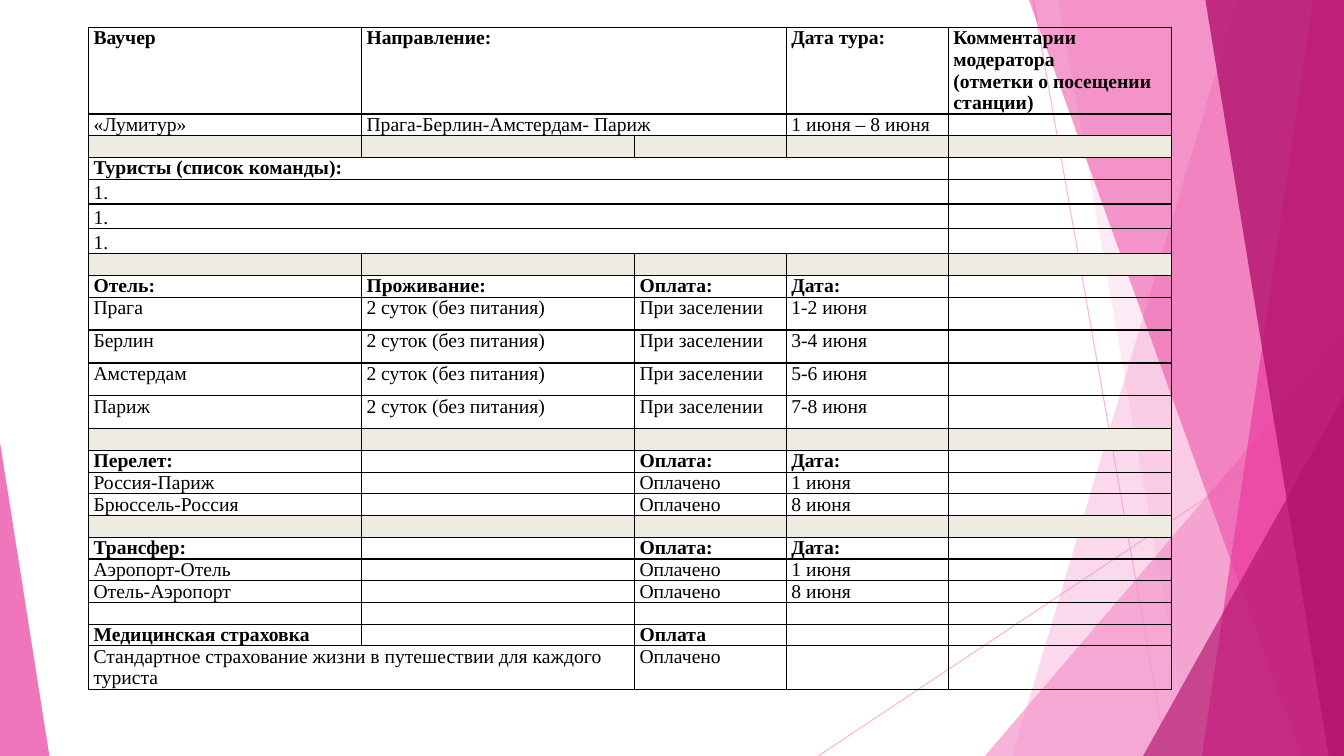
from lxml import etree
from pptx import Presentation
from pptx.dml.color import RGBColor
from pptx.enum.shapes import MSO_CONNECTOR, MSO_SHAPE
from pptx.oxml.ns import qn
from pptx.util import Pt

STRAIGHT = MSO_CONNECTOR.STRAIGHT
TRIANGLE = MSO_SHAPE.ISOSCELES_TRIANGLE

WIDTH, HEIGHT = 960, 540
BLACK = RGBColor(0x00, 0x00, 0x00)
BEIGE = RGBColor(0xEE, 0xEC, 0xE1)
LIGHT_PINK = RGBColor(0xF4, 0x96, 0xCB)
PINK = RGBColor(0xEB, 0x3D, 0x9F)
CRIMSON = RGBColor(0xB2, 0x13, 0x6D)
FONT_NAME, FONT_SIZE = "Times New Roman", 14

# Row kinds: height in points, space above the text, bold text, fill
KINDS = {
    "top": (62, 0, True, None),
    "heading": (15.5, 0, True, None),
    "plain": (15.5, 0, False, None),
    "band": (15.5, 0, False, BEIGE),
    "tourist": (17.75, 2.25, False, None),
    "hotel": (23.5, 0, False, None),
    "insurance": (31, 0, False, None),
}
# Kind, texts of the columns, merged columns (first, last)
STAY, ON_ARRIVAL, PAID = "2 суток (без питания)", "При заселении", "Оплачено"
ROWS = [
    ("top", ["Ваучер", "Направление:", "", "Дата тура:",
             "Комментарии модератора\n(отметки о посещении станции)"], (1, 2)),
    ("plain", ["«Лумитур»", "Прага-Берлин-Амстердам- Париж", "", "1 июня – 8 июня"], (1, 2)),
    ("band", [], None),
    ("heading", ["Туристы (список команды):"], (0, 3)),
    ("tourist", ["1."], (0, 3)),
    ("tourist", ["1."], (0, 3)),
    ("tourist", ["1."], (0, 3)),
    ("band", [], None),
    ("heading", ["Отель:", "Проживание:", "Оплата:", "Дата:"], None),
    ("hotel", ["Прага", STAY, ON_ARRIVAL, "1-2 июня"], None),
    ("hotel", ["Берлин", STAY, ON_ARRIVAL, "3-4 июня"], None),
    ("hotel", ["Амстердам", STAY, ON_ARRIVAL, "5-6 июня"], None),
    ("hotel", ["Париж", STAY, ON_ARRIVAL, "7-8 июня"], None),
    ("band", [], None),
    ("heading", ["Перелет:", "", "Оплата:", "Дата:"], None),
    ("plain", ["Россия-Париж", "", PAID, "1 июня"], None),
    ("plain", ["Брюссель-Россия", "", PAID, "8 июня"], None),
    ("band", [], None),
    ("heading", ["Трансфер:", "", "Оплата:", "Дата:"], None),
    ("plain", ["Аэропорт-Отель", "", PAID, "1 июня"], None),
    ("plain", ["Отель-Аэропорт", "", PAID, "8 июня"], None),
    ("plain", [], None),
    ("heading", ["Медицинская страховка", "", "Оплата"], None),
    ("insurance", ["Стандартное страхование жизни в путешествии для каждого туриста", "", PAID],
     (0, 1)),
]
COLUMN_WIDTHS = [195, 195, 108.5, 115.75, 159.5]
TABLE_LEFT, TABLE_TOP = 63.2, 19.5

RAYS = [(738, 0, 833.5, HEIGHT), (WIDTH, 290, 584.5, HEIGHT)]
# Strips reach the right edge: left end at the top, left end at the bottom, colour, opacity.
# Triangles: left, top, width, apex position, colour, opacity.
FACETS = [
    ("strip", 884, 723, LIGHT_PINK, 36),
    ("strip", 756, 851, LIGHT_PINK, 20),
    ("triangle", 703.5, 240, 256.5, 1, LIGHT_PINK, 72),
    ("strip", 735, 929.5, PINK, 50),
    ("strip", 938, 858.5, PINK, 70),
    ("strip", 861, 949, CRIMSON, 80),
    ("triangle", 816.5, 283, 143.5, 1, CRIMSON, 66),
    ("triangle", 0, 316, 35.3, 0, PINK, 70),
]


def set_opacity(properties, percent):
    color = properties.find(".//" + qn("a:srgbClr"))
    etree.SubElement(color, qn("a:alpha"), val=str(percent * 1000))


def add_ray(slide, ends):
    ray = slide.shapes.add_connector(STRAIGHT, *map(Pt, ends))
    ray.line.color.rgb = LIGHT_PINK
    ray.line.width = Pt(0.75)
    properties = ray._element.spPr
    set_opacity(properties, 70)
    etree.SubElement(properties, qn("a:effectLst"))


def add_facet(slide, kind, *geometry, color, opacity):
    if kind == "strip":
        top_x, bottom_x = geometry
        builder = slide.shapes.build_freeform(Pt(top_x), 0)
        corners = [(WIDTH, 0), (WIDTH, HEIGHT), (bottom_x, HEIGHT)]
        builder.add_line_segments([(Pt(x), Pt(y)) for x, y in corners], close=True)
        facet = builder.convert_to_shape()
    else:
        left, top, width, apex = geometry
        facet = slide.shapes.add_shape(TRIANGLE, Pt(left), Pt(top), Pt(width), Pt(HEIGHT - top))
        facet.adjustments[0] = apex
    facet.shadow.inherit = False
    facet.fill.solid()
    facet.fill.fore_color.rgb = color
    facet.line.fill.background()
    set_opacity(facet._element.spPr, opacity)


def add_borders(cell):
    properties = cell._tc.get_or_add_tcPr()
    for index, side in enumerate(("a:lnL", "a:lnR", "a:lnT", "a:lnB")):
        border = etree.Element(qn(side), w=str(Pt(1)))
        fill = etree.SubElement(border, qn("a:solidFill"))
        etree.SubElement(fill, qn("a:srgbClr"), val=str(BLACK))
        properties.insert(index, border)


def fill_cell(cell, text, space_above, bold, fill):
    cell.margin_left = cell.margin_right = Pt(3.6)
    cell.margin_top, cell.margin_bottom = Pt(space_above), 0
    if fill is None:
        cell.fill.background()
    else:
        cell.fill.solid()
        cell.fill.fore_color.rgb = fill
    add_borders(cell)
    frame = cell.text_frame
    for index, line in enumerate(text.split("\n")):
        paragraph = frame.add_paragraph() if index else frame.paragraphs[0]
        if line:
            run = paragraph.add_run()
            run.text = line
            run.font.name = FONT_NAME
            run.font.size = Pt(FONT_SIZE)
            run.font.bold = bold
            run.font.color.rgb = BLACK
        else:  # keeps the height of an empty row small
            end = etree.SubElement(paragraph._p, qn("a:endParaRPr"), sz=str(FONT_SIZE * 100))
            etree.SubElement(end, qn("a:latin"), typeface=FONT_NAME)


def add_voucher(slide):
    heights = [KINDS[kind][0] for kind, _, _ in ROWS]
    table = slide.shapes.add_table(
        len(ROWS), len(COLUMN_WIDTHS), Pt(TABLE_LEFT), Pt(TABLE_TOP),
        Pt(sum(COLUMN_WIDTHS)), Pt(sum(heights))).table
    table.first_row = table.horz_banding = False
    for column, width in zip(table.columns, COLUMN_WIDTHS):
        column.width = Pt(width)
    for row_index, (kind, texts, merged) in enumerate(ROWS):
        height, *style = KINDS[kind]
        table.rows[row_index].height = Pt(height)
        for column_index in range(len(COLUMN_WIDTHS)):
            text = texts[column_index] if column_index < len(texts) else ""
            fill_cell(table.cell(row_index, column_index), text, *style)
        if merged:
            first, last = merged
            table.cell(row_index, first).merge(table.cell(row_index, last))


def main():
    presentation = Presentation()
    presentation.slide_width, presentation.slide_height = Pt(WIDTH), Pt(HEIGHT)
    slide = presentation.slides.add_slide(presentation.slide_layouts[6])
    for ends in RAYS:
        add_ray(slide, ends)
    for *geometry, color, opacity in FACETS:
        add_facet(slide, *geometry, color=color, opacity=opacity)
    add_voucher(slide)
    presentation.save("out.pptx")


if __name__ == "__main__":
    main()
